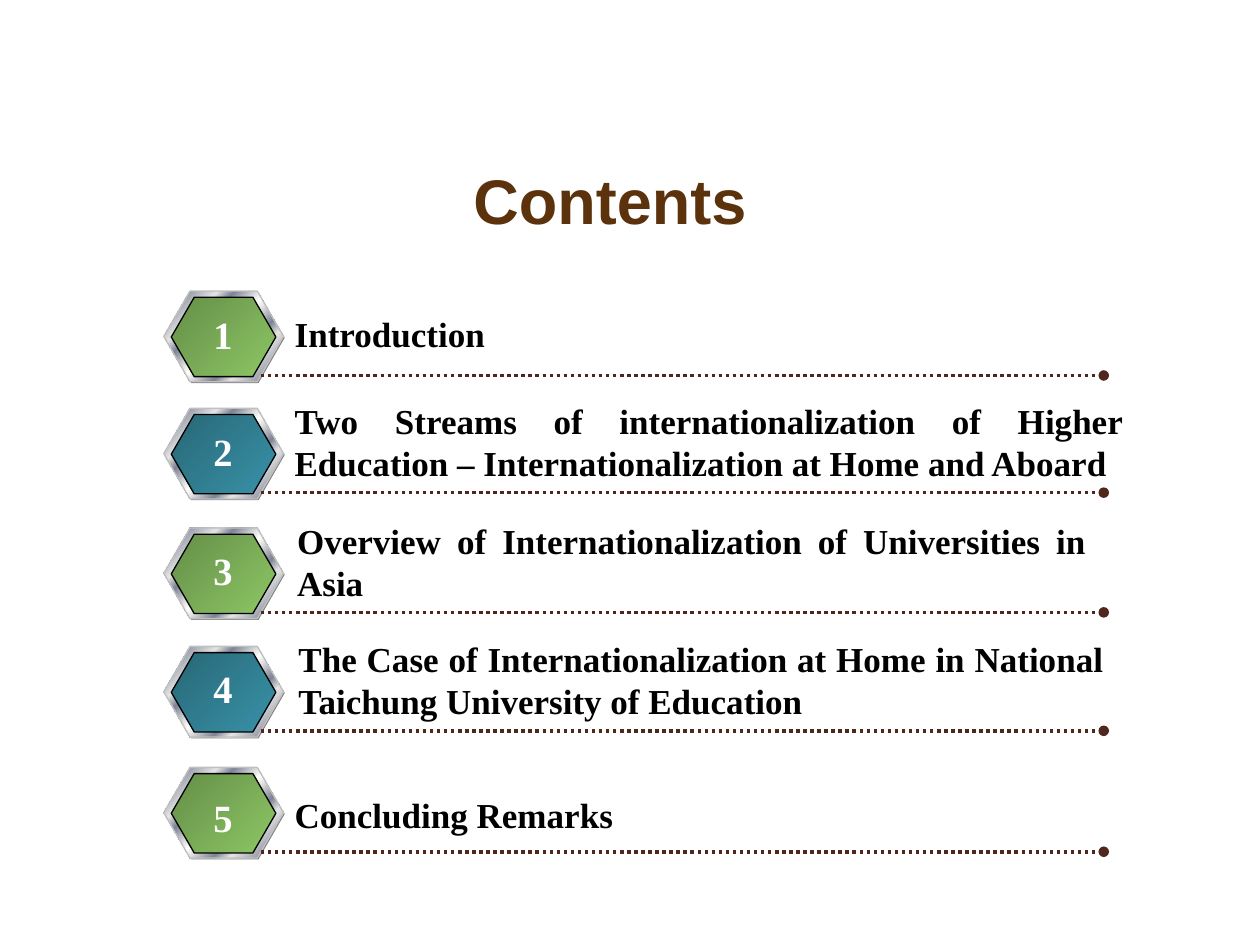
"""Build a contents slide with five numbered hexagon entries."""
import pptx
import pptx.util
import pptx.dml.color
import pptx.enum.dml
import pptx.enum.shapes
import pptx.enum.text
import pptx.oxml
import pptx.oxml.ns

Inches = pptx.util.Inches
ALIGN = pptx.enum.text.PP_ALIGN

THEME = {
    "title": {"name": "Arial", "size": 36, "bold": True, "color": "5C320C"},
    "entry": {"name": "Times New Roman", "size": 20, "bold": True, "color": "000000"},
    "number": {"name": "Times New Roman", "size": 22, "bold": True, "color": "FFFFFF"},
    "shade": "808080",
    "rim": "C0C0C0",
    "outline": "000000",
    "rule": "4F271C",
    "metal": [(0, "E6E6E6"), (8, "7D8496"), (26, "E6E6E6"), (34, "7D8496"),
              (46, "E6E6E6"), (50, "FFFFFF"), (54, "E6E6E6"), (66, "7D8496"),
              (74, "E6E6E6"), (92, "7D8496"), (100, "E6E6E6")],
    "badges": [[(0, "658E48"), (100, "8DC765")], [(0, "286877"), (100, "3891A7")]],
}

TITLE = ("Contents", (3.66, 1.23, 2.73, 0.71))
ENTRIES = [
    {"text": "Introduction", "top": 2.31, "number_top": 2.42,
     "box": (2.24, 2.43, 1.72, 0.44), "wrap": False, "align": ALIGN.LEFT},
    {"text": "Two Streams of internationalization of Higher Education – "
             "Internationalization at Home and Aboard", "top": 3.24, "number_top": 3.35,
     "box": (2.24, 3.12, 6.77, 0.77), "wrap": True, "align": ALIGN.JUSTIFY},
    {"text": "Overview of Internationalization of Universities in Asia",
     "top": 4.19, "number_top": 4.29,
     "box": (2.26, 4.07, 6.46, 0.77), "wrap": True, "align": ALIGN.JUSTIFY},
    {"text": "The Case of Internationalization at Home in National "
             "Taichung University of Education", "top": 5.13, "number_top": 5.23,
     "box": (2.27, 5.01, 6.59, 0.77), "wrap": True, "align": ALIGN.JUSTIFY},
    {"text": "Concluding Remarks", "top": 6.09, "number_top": 6.25,
     "box": (2.24, 6.25, 2.75, 0.44), "wrap": False, "align": ALIGN.JUSTIFY},
]


def rgb(value):
    """Return a colour from its hex value."""
    return pptx.dml.color.RGBColor.from_string(value)


def add_text(slide, text, box, style, align=ALIGN.LEFT, wrap=False):
    """Add a one-paragraph text box."""
    frame = slide.shapes.add_textbox(*map(Inches, box)).text_frame
    frame.word_wrap = wrap
    paragraph = frame.paragraphs[0]
    paragraph.alignment = align
    run = paragraph.add_run()
    run.text = text
    formats = {"name": style["name"], "size": pptx.util.Pt(style["size"]), "bold": style["bold"]}
    for name, value in formats.items():
        setattr(run.font, name, value)
    run.font.color.rgb = rgb(style["color"])


def fill_gradient(shape, stops):
    """Fill a shape with a diagonal gradient of any number of stops."""
    shape.fill.gradient()
    shape.fill.gradient_angle = 315
    stop_list = shape._element.spPr.find(".//" + pptx.oxml.ns.qn("a:gsLst"))
    for stop in list(stop_list):
        stop_list.remove(stop)
    for position, color in stops:
        stop_list.append(pptx.oxml.parse_xml(
            f'<a:gs {pptx.oxml.ns.nsdecls("a")} pos="{position * 1000}">'
            f'<a:srgbClr val="{color}"/></a:gs>'))


def add_hexagon(slide, box, fill, line=None):
    """Add a hexagon with a plain or gradient fill."""
    shape = slide.shapes.add_shape(pptx.enum.shapes.MSO_SHAPE.HEXAGON, *map(Inches, box))
    shape.shadow.inherit = False
    shape.adjustments[0] = 0.289
    if isinstance(fill, str):
        shape.fill.solid()
        shape.fill.fore_color.rgb = rgb(fill)
    else:
        fill_gradient(shape, fill)
    if line:
        shape.line.color.rgb = rgb(line)
        shape.line.width = pptx.util.Pt(0.75)
    else:
        shape.line.fill.background()


def add_rule(slide, top):
    """Add a dotted rule that ends in a dot."""
    connector = slide.shapes.add_connector(
        pptx.enum.shapes.MSO_CONNECTOR.STRAIGHT, *map(Inches, (2.07, top, 8.76, top)))
    formats = {"width": pptx.util.Pt(2),
               "dash_style": pptx.enum.dml.MSO_LINE.ROUND_DOT}
    connector.line.color.rgb = rgb(THEME["rule"])
    for name, value in formats.items():
        setattr(connector.line, name, value)
    namespace = pptx.oxml.ns.nsdecls("a")
    connector.line._get_or_add_ln().append(
        pptx.oxml.parse_xml(f'<a:tailEnd {namespace} type="oval"/>'))
    connector._element.spPr.append(pptx.oxml.parse_xml(f"<a:effectLst {namespace}/>"))


def add_entry(slide, index, entry):
    """Add a badge, its rule, its text and its number."""
    top = entry["top"]
    badge = THEME["badges"][index % len(THEME["badges"])]
    add_hexagon(slide, (1.31, top + 0.01, 0.95, 0.72), THEME["shade"])
    add_hexagon(slide, (1.3, top, 0.95, 0.72), THEME["metal"], THEME["rim"])
    add_hexagon(slide, (1.36, top + 0.05, 0.83, 0.63), badge, THEME["outline"])
    add_rule(slide, top + 0.67)
    add_text(slide, entry["text"], entry["box"], THEME["entry"], entry["align"], entry["wrap"])
    add_text(slide, str(index + 1), (1.59, entry["number_top"], 0.36, 0.47),
             THEME["number"], ALIGN.CENTER)


def main():
    """Build and save the presentation."""
    presentation = pptx.Presentation()
    presentation.slide_width, presentation.slide_height = Inches(10), Inches(7.5)
    slide = presentation.slides.add_slide(presentation.slide_layouts[6])
    for index, entry in enumerate(ENTRIES):
        add_entry(slide, index, entry)
    add_text(slide, *TITLE, THEME["title"])
    presentation.save("out.pptx")


if __name__ == "__main__":
    main()
